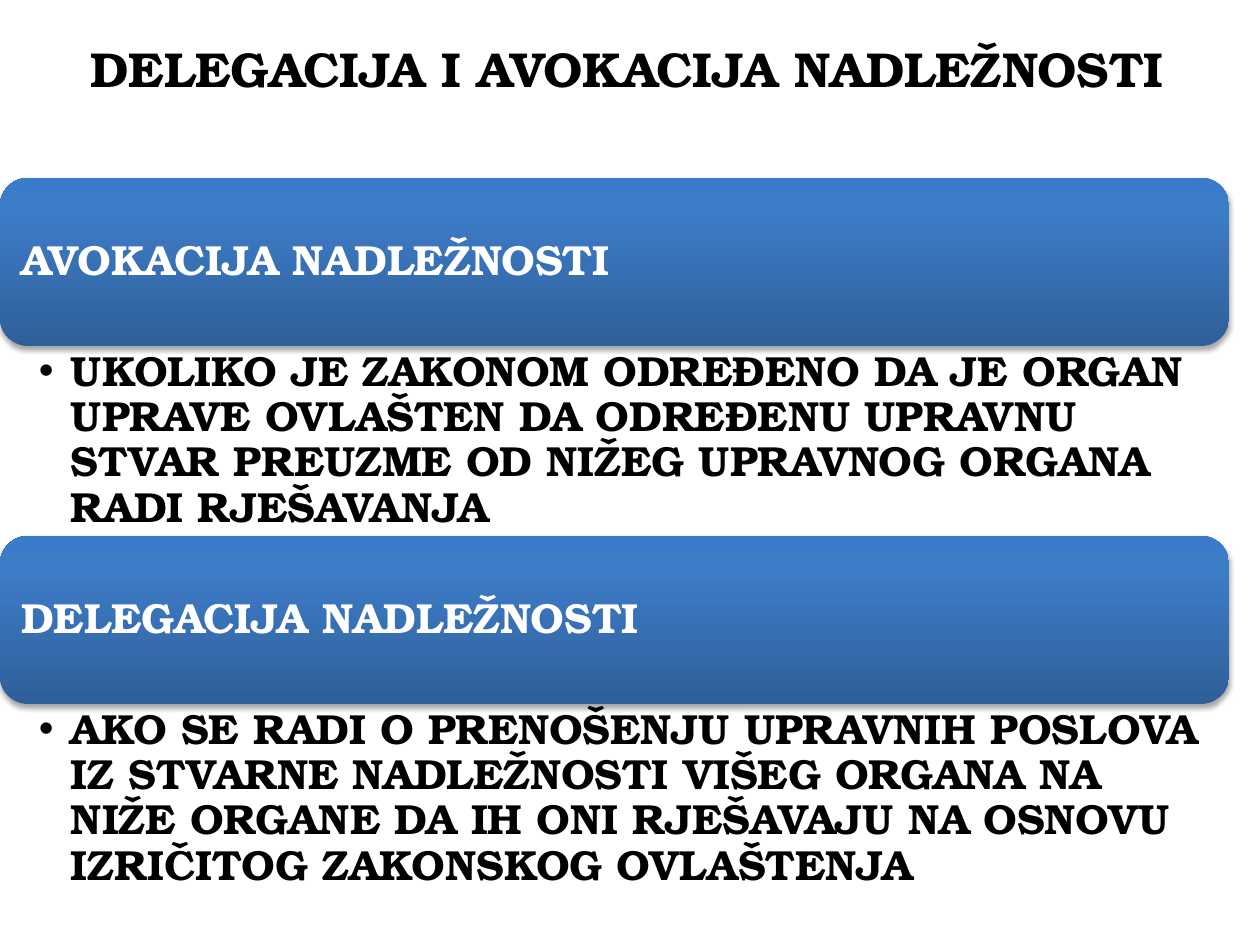
from lxml import etree
from pptx import Presentation
from pptx.dml.color import RGBColor
from pptx.enum.shapes import MSO_SHAPE
from pptx.enum.text import MSO_ANCHOR, PP_ALIGN
from pptx.oxml import parse_xml
from pptx.oxml.ns import nsdecls, qn
from pptx.util import Pt

ROUND = MSO_SHAPE.ROUNDED_RECTANGLE
TOP, MIDDLE = MSO_ANCHOR.TOP, MSO_ANCHOR.MIDDLE
LEFT, CENTER = PP_ALIGN.LEFT, PP_ALIGN.CENTER

SCALE = 914400 / 126
FONT = "TeX Gyre Bonum"
COLORS = {"ink": "000000", "light": "FFFFFF",
          "deep": "2F5F99", "mid": "3D7CC7", "top": "3A7CCB"}
STOPS = ((0, "deep"), (80, "mid"), (100, "top"))

TITLE = "DELEGACIJA I AVOKACIJA NADLEŽNOSTI "
PARTS = (
    ("AVOKACIJA NADLEŽNOSTI",
     "UKOLIKO JE ZAKONOM ODREĐENO DA JE ORGAN UPRAVE OVLAŠTEN DA ODREĐENU "
     "UPRAVNU STVAR PREUZME OD NIŽEG UPRAVNOG ORGANA RADI RJEŠAVANJA"),
    ("DELEGACIJA NADLEŽNOSTI",
     "AKO SE RADI O PRENOŠENJU UPRAVNIH POSLOVA IZ STVARNE NADLEŽNOSTI VIŠEG "
     "ORGANA NA NIŽE ORGANE DA IH ONI RJEŠAVAJU NA OSNOVU IZRIČITOG "
     "ZAKONSKOG OVLAŠTENJA"),
)
BAR_H, BODY_H = 168, 190


def px(n):
    return round(n * SCALE)


def assign(obj, values):
    for name, value in values.items():
        setattr(obj, name, value)


def write(shape, text, size, color, anchor, align, pads, line=1.0):
    """Fill the shape with one paragraph; pads are left, top, right, bottom."""
    frame = shape.text_frame
    sides = ("margin_left", "margin_top", "margin_right", "margin_bottom")
    assign(frame, {"word_wrap": True, "vertical_anchor": anchor,
                   **dict(zip(sides, map(px, pads)))})
    para = frame.paragraphs[0]
    assign(para, {"alignment": align, "line_spacing": line})
    run = para.add_run()
    run.text = text
    assign(run.font, {"name": FONT, "size": Pt(size), "bold": True})
    run.font.color.rgb = RGBColor.from_string(COLORS[color])
    return para


def shade(shape):
    """Give the shape its vertical gradient and soft drop shadow."""
    stops = "".join(
        f'<a:gs pos="{pos * 1000}"><a:srgbClr val="{COLORS[key]}"/></a:gs>'
        for pos, key in STOPS)
    fill = parse_xml(
        f'<a:gradFill {nsdecls("a")} rotWithShape="1"><a:gsLst>{stops}</a:gsLst>'
        '<a:lin ang="16200000" scaled="0"/></a:gradFill>')
    shadow = parse_xml(
        f'<a:effectLst {nsdecls("a")}><a:outerShdw blurRad="{Pt(3.1)}" '
        f'dist="{Pt(1.8)}" dir="5400000" rotWithShape="0">'
        f'<a:srgbClr val="{COLORS["ink"]}"><a:alpha val="35000"/></a:srgbClr>'
        '</a:outerShdw></a:effectLst>')
    shape.line.fill.background()
    props = shape._element.spPr
    props.find(qn("a:prstGeom")).addnext(fill)
    props.append(shadow)


def bullet(para, indent):
    props = para._p.get_or_add_pPr()
    props.set("marL", str(px(indent)))
    props.set("indent", str(-px(indent)))
    etree.SubElement(props, qn("a:buFont")).set("typeface", "Arial")
    etree.SubElement(props, qn("a:buChar")).set("char", "•")


def add_title(slide, x, y, w, h):
    box = slide.shapes.add_textbox(px(x), px(y), px(w), px(h))
    write(box, TITLE, 28, "ink", MIDDLE, CENTER, (13, 6, 13, 6))


def add_part(slide, x, y, w, head, body):
    """Place a heading bar with its bulleted text below."""
    bar = slide.shapes.add_shape(ROUND, px(x), px(y), px(w), px(BAR_H))
    shade(bar)
    write(bar, head, 24, "light", MIDDLE, LEFT, (13, 13, 13, 13), 0.9)
    box = slide.shapes.add_textbox(px(x), px(y + BAR_H), px(w), px(BODY_H))
    para = write(box, body, 24, "ink", TOP, LEFT, (39, 4, 24, 4), 0.9)
    bullet(para, 32)


def main():
    deck = Presentation()
    assign(deck, {"slide_width": px(1260), "slide_height": px(945)})
    slide = deck.slides.add_slide(deck.slide_layouts[6])
    add_title(slide, 63, 3, 1144, 130)
    for i, (head, body) in enumerate(PARTS):
        add_part(slide, 0, 178 + i * (BAR_H + BODY_H), 1229, head, body)
    deck.save("out.pptx")


if __name__ == "__main__":
    main()
